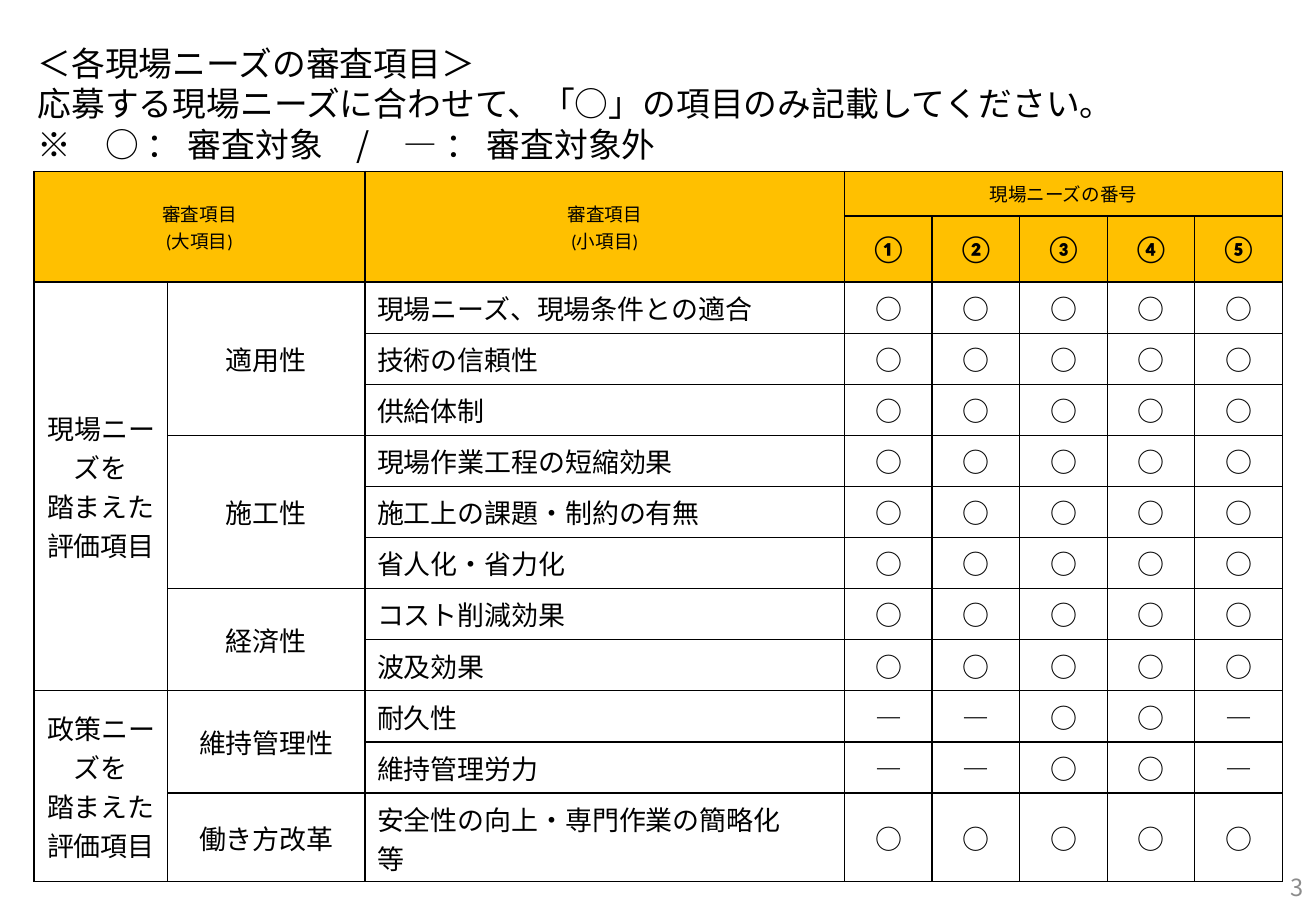
from lxml import etree
from pptx import Presentation
from pptx.dml.color import RGBColor
from pptx.enum import text
from pptx.oxml import ns
from pptx.util import Pt

BLACK = RGBColor(0, 0, 0)
GRAY = RGBColor(0x8C, 0x8C, 0x8C)
AMBER = RGBColor(0xFF, 0xC0, 0)
WHITE = RGBColor(0xFF, 0xFF, 0xFF)
JP = "Noto Sans CJK JP"
LEFT, CENTER, RIGHT = text.PP_ALIGN.LEFT, text.PP_ALIGN.CENTER, text.PP_ALIGN.RIGHT
MIDDLE = text.MSO_ANCHOR.MIDDLE

COLUMNS = [79.2, 116.9, 284.4] + [51.9] * 5
ROWS = [26.6, 39.2] + [30.3] * 10 + [52.6]
NEEDS = "①②③④⑤"
ALL, PARTIAL = "○○○○○", "――○○―"

# (large item, [(middle item, [(small item, marks)])])
CRITERIA = [
    ("現場ニーズを\n踏まえた評価項目", [
        ("適用性", [("現場ニーズ、現場条件との適合", ALL),
                 ("技術の信頼性", ALL),
                 ("供給体制", ALL)]),
        ("施工性", [("現場作業工程の短縮効果", ALL),
                 ("施工上の課題・制約の有無", ALL),
                 ("省人化・省力化", ALL)]),
        ("経済性", [("コスト削減効果", ALL),
                 ("波及効果", ALL)]),
    ]),
    ("政策ニーズを\n踏まえた\n評価項目", [
        ("維持管理性", [("耐久性", PARTIAL),
                   ("維持管理労力", PARTIAL)]),
        ("働き方改革", [("安全性の向上・専門作業の簡略化　等", ALL)]),
    ]),
]


def write(tf, content, size=16, font=JP, color=BLACK, bold=False, align=LEFT,
          spacing=None):
    for i, line in enumerate(content.split("\n")):
        p = tf.add_paragraph() if i else tf.paragraphs[0]
        p.alignment = align
        if spacing:
            p.line_spacing = spacing
        r = p.add_run()
        r.text = line
        r.font.size, r.font.bold, r.font.name = Pt(size), bold, font
        r.font.color.rgb = color
        ea = etree.SubElement(r.font._element, ns.qn("a:ea"))
        ea.set("typeface", JP)


def add_text(s, x, y, w, h, content, anchor=text.MSO_ANCHOR.TOP, **fmt):
    tf = s.shapes.add_textbox(Pt(x), Pt(y), Pt(w), Pt(h)).text_frame
    tf.word_wrap = True
    tf.vertical_anchor = anchor
    write(tf, content, **fmt)


def format_cell(cell, fill):
    """Give a cell its fill and a thin black border on each side."""
    tc_pr = cell._tc.get_or_add_tcPr()
    for side in ("lnL", "lnR", "lnT", "lnB"):
        ln = etree.SubElement(tc_pr, ns.qn(f"a:{side}"), w=str(Pt(1)))
        solid = etree.SubElement(ln, ns.qn("a:solidFill"))
        etree.SubElement(solid, ns.qn("a:srgbClr"), val=str(BLACK))
    cell.fill.solid()
    cell.fill.fore_color.rgb = fill
    cell.vertical_anchor = MIDDLE


def fill_cell(table, row, col, content, rows=1, cols=1, vertical=False,
              align=CENTER, **fmt):
    cell = table.cell(row, col)
    if rows > 1 or cols > 1:
        cell.merge(table.cell(row + rows - 1, col + cols - 1))
    if vertical:
        cell._tc.get_or_add_tcPr().set("vert", "eaVert")
    write(cell.text_frame, content, align=align, **fmt)


def fill_header(table):
    small = dict(size=11, font="Calibri")
    fill_cell(table, 0, 0, "審査項目\n(大項目)", rows=2, cols=2, **small)
    fill_cell(table, 0, 2, "審査項目\n(小項目)", rows=2, **small)
    fill_cell(table, 0, 3, "現場ニーズの番号", cols=5, **small)
    for col, number in enumerate(NEEDS, 3):
        fill_cell(table, 1, col, number, font="Calibri", bold=True)


def fill_criteria(table):
    row = 2
    for large, groups in CRITERIA:
        count = sum(len(items) for _, items in groups)
        fill_cell(table, row, 0, large, rows=count, vertical=True)
        for middle, items in groups:
            fill_cell(table, row, 1, middle, rows=len(items))
            for small, marks in items:
                fill_cell(table, row, 2, small, align=LEFT)
                for col, mark in enumerate(marks, 3):
                    fill_cell(table, row, col, mark)
                row += 1


def add_criteria_table(s, x, y):
    table = s.shapes.add_table(len(ROWS), len(COLUMNS), Pt(x), Pt(y),
                               Pt(sum(COLUMNS)), Pt(sum(ROWS))).table
    for column, width in zip(table.columns, COLUMNS):
        column.width = Pt(width)
    for i, height in enumerate(ROWS):
        table.rows[i].height = Pt(height)
        for cell in table.rows[i].cells:
            format_cell(cell, AMBER if i < 2 else WHITE)
    fill_header(table)
    fill_criteria(table)


def main():
    prs = Presentation()
    prs.slide_width, prs.slide_height = Pt(780), Pt(540)
    s = prs.slides.add_slide(prs.slide_layouts[6])
    add_text(s, 604.8, 511.2, 175.2, 28.8, "3", anchor=MIDDLE,
             size=14, color=GRAY, align=RIGHT)
    add_criteria_table(s, 20.2, 101.5)
    add_text(s, 15.1, 21.6, 691.9, 79.9,
             "＜各現場ニーズの審査項目＞\n"
             "応募する現場ニーズに合わせて、「○」の項目のみ記載してください。\n"
             "※　○ ： 審査対象　/　― ： 審査対象外",
             size=20, spacing=Pt(24))
    prs.save("out.pptx")


if __name__ == "__main__":
    main()
